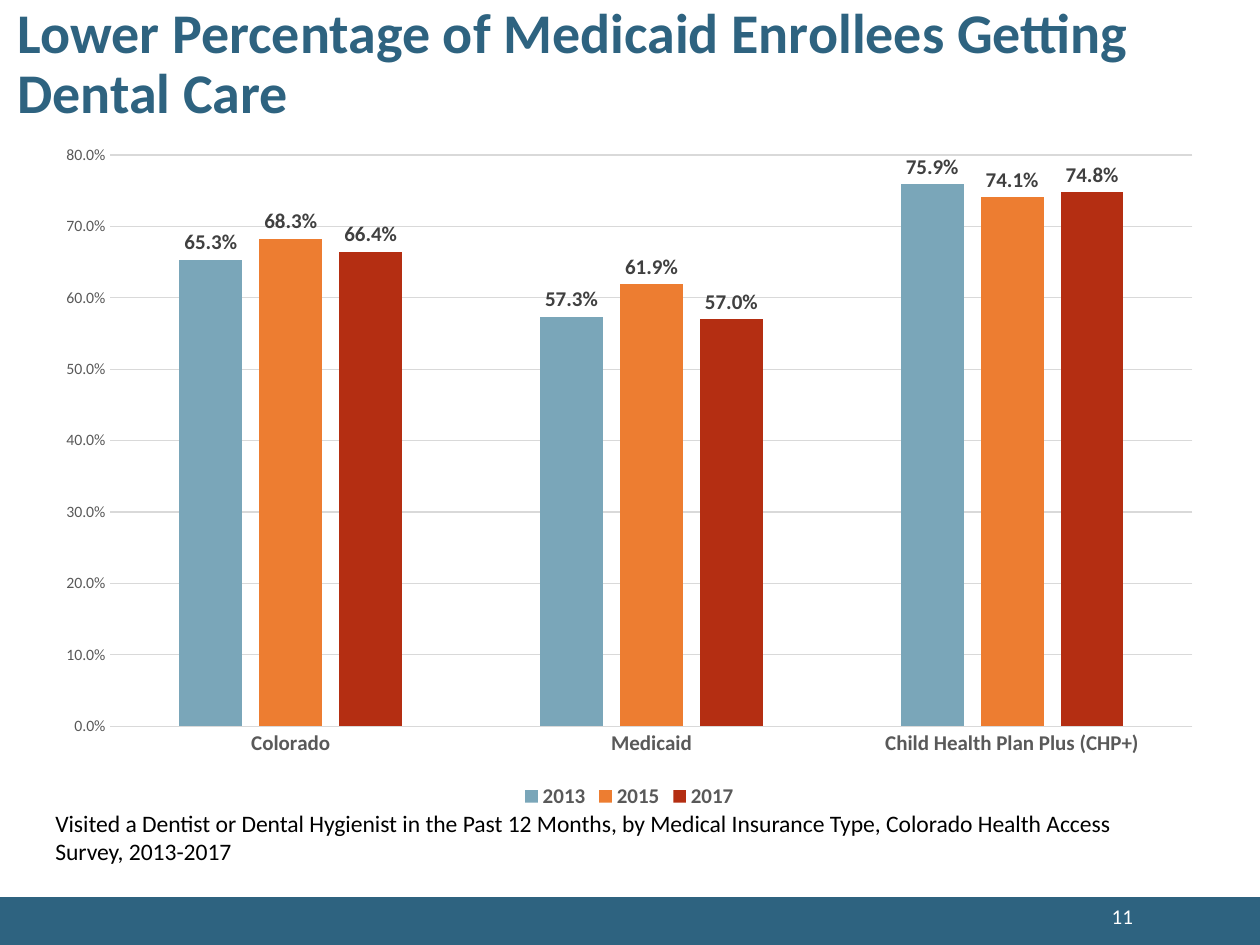
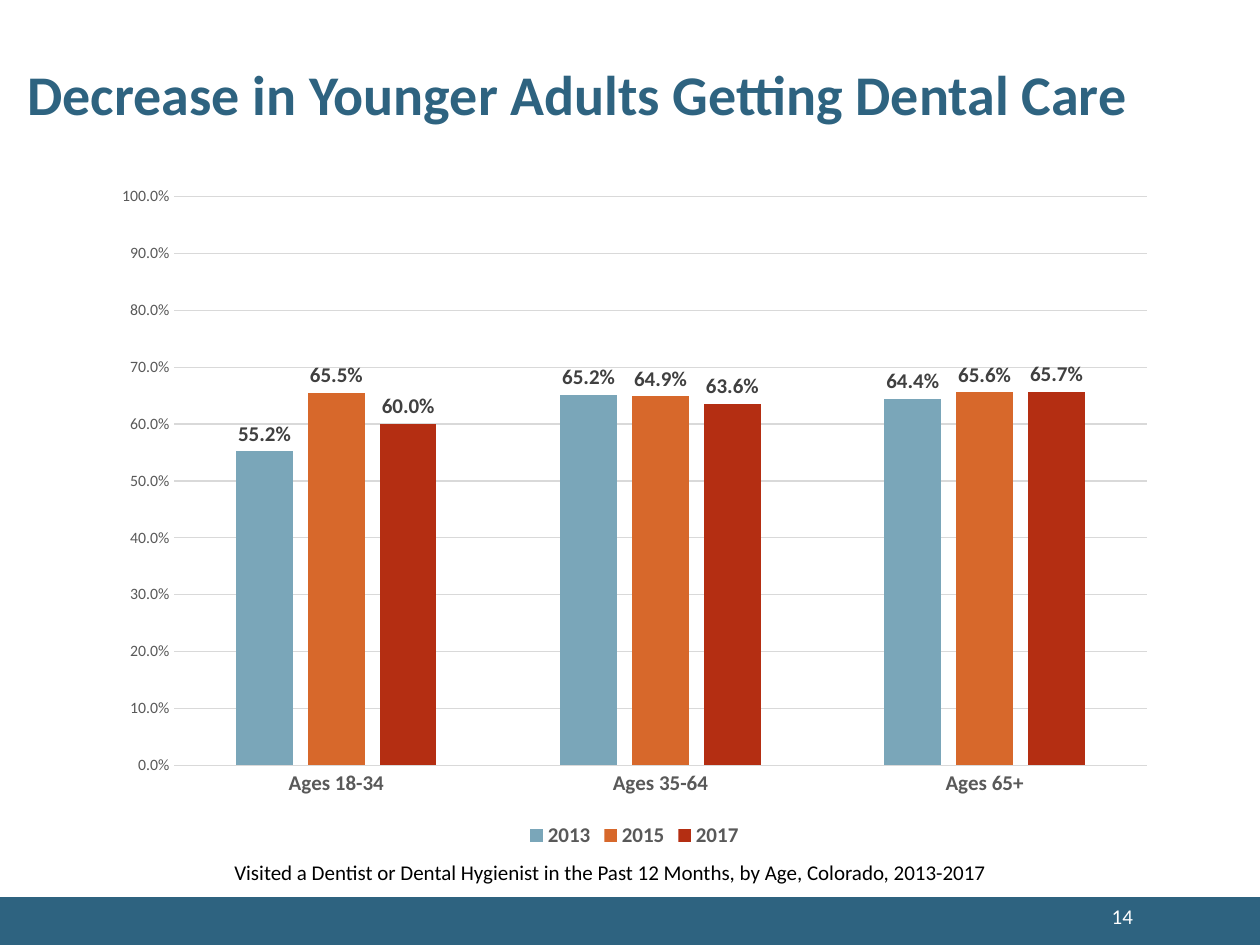
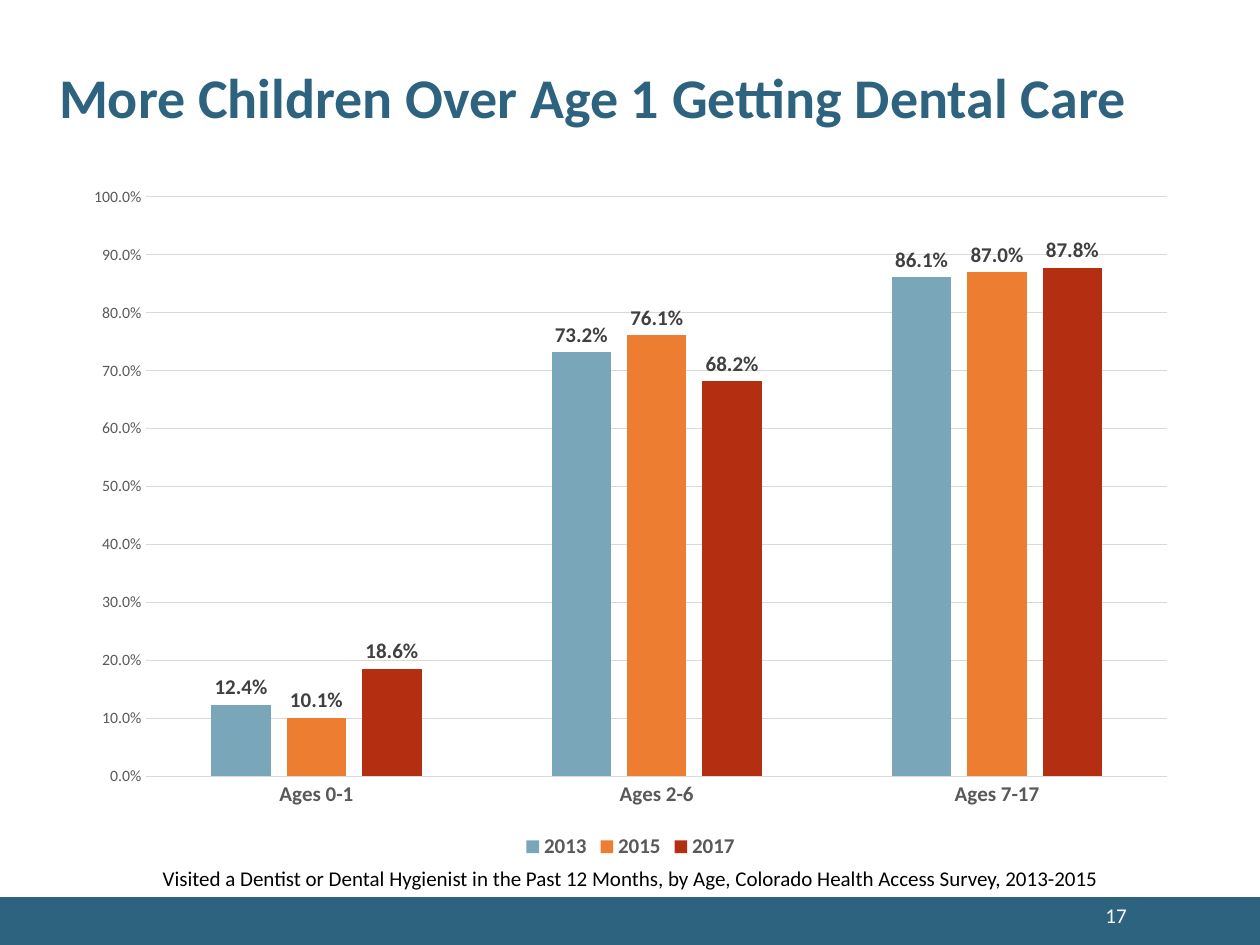
from dataclasses import dataclass

from pptx import Presentation
from pptx import util as u
from pptx.chart import data as chart_data
from pptx.dml import color
from pptx.enum import chart as ch
from pptx.enum import shapes, text

FONT = "Calibri"
TEAL, WHITE, BLACK = "2E6380", "FFFFFF", "000000"
AXIS_GREY, LABEL_GREY, GRID_GREY = "595959", "404040", "D9D9D9"
BLUE, ORANGE, RUST, RED = "7AA6B9", "ED7D31", "D7682B", "B42E12"
YEARS = ("2013", "2015", "2017")
COLUMNS, ROWS = 100, 75
PERCENT = "0.0%"

deck = Presentation()
deck.slide_width = u.Inches(10)
deck.slide_height = u.Inches(7.5)


@dataclass
class Box:
    column: float
    row: float
    columns: float
    rows: float

    def inner(self, column, row, columns, rows):
        return Box(self.column + column, self.row + row, columns, rows)

    def frame(self):
        across, down = deck.slide_width / COLUMNS, deck.slide_height / ROWS
        return (round(self.column * across), round(self.row * down),
                round(self.columns * across), round(self.rows * down))


PAGE = Box(0, 0, COLUMNS, ROWS)
BAND = PAGE.inner(0, 71.2, COLUMNS, 3.8)


def rgb(code):
    return color.RGBColor.from_string(code)


def style_font(font, size, code, bold=False):
    font.name = FONT
    font.size = u.Pt(size)
    font.bold = bold
    font.color.rgb = rgb(code)


def add_text(page, box, words, size, code, bold=False,
             align=text.PP_ALIGN.LEFT, anchor=text.MSO_ANCHOR.TOP, spacing=1.0):
    frame = page.shapes.add_textbox(*box.frame()).text_frame
    frame.word_wrap = True
    frame.vertical_anchor = anchor
    para = frame.paragraphs[0]
    para.text = words
    para.alignment = align
    para.line_spacing = spacing
    style_font(para.font, size, code, bold)


def add_title(page, box, words):
    add_text(page, box, words, 32, TEAL, bold=True,
             anchor=text.MSO_ANCHOR.MIDDLE, spacing=0.9)


def add_band(page, box):
    band = page.shapes.add_shape(shapes.MSO_SHAPE.RECTANGLE, *box.frame())
    band.shadow.inherit = False
    band.fill.solid()
    band.fill.fore_color.rgb = rgb(TEAL)
    band.line.fill.background()


def add_page_number(page, box, number):
    add_text(page, box, str(number), 12, WHITE,
             align=text.PP_ALIGN.RIGHT, anchor=text.MSO_ANCHOR.MIDDLE)


def style_axes(chart, top):
    groups, scale = chart.category_axis, chart.value_axis
    for axis, size, bold in ((groups, 12, True), (scale, 9, False)):
        axis.major_tick_mark = axis.minor_tick_mark = ch.XL_TICK_MARK.NONE
        style_font(axis.tick_labels.font, size, AXIS_GREY, bold)
    scale.minimum_scale, scale.maximum_scale, scale.major_unit = 0, top, 0.1
    scale.tick_labels.number_format = PERCENT
    scale.tick_labels.number_format_is_linked = False
    scale.format.line.fill.background()
    scale.has_major_gridlines = True
    for line in (groups.format.line, scale.major_gridlines.format.line):
        line.color.rgb = rgb(GRID_GREY)
        line.width = u.Pt(0.75)


def style_series(series, code):
    series.format.fill.solid()
    series.format.fill.fore_color.rgb = rgb(code)
    series.invert_if_negative = False
    labels = series.data_labels
    labels.show_value = True
    labels.number_format = PERCENT
    labels.number_format_is_linked = False
    labels.position = ch.XL_LABEL_POSITION.OUTSIDE_END
    style_font(labels.font, 12, LABEL_GREY, bold=True)


def add_visits_chart(page, box, visits, middle_colour, top):
    source = chart_data.CategoryChartData(number_format=PERCENT)
    source.categories = list(visits)
    for year, values in zip(YEARS, zip(*visits.values())):
        source.add_series(year, values)
    chart = page.shapes.add_chart(
        ch.XL_CHART_TYPE.COLUMN_CLUSTERED, *box.frame(), source).chart
    style_font(chart.font, 10, BLACK)
    chart.has_title = False
    chart.has_legend = True
    chart.legend.position = ch.XL_LEGEND_POSITION.BOTTOM
    chart.legend.include_in_layout = False
    style_font(chart.legend.font, 12, AXIS_GREY, bold=True)
    style_axes(chart, top)
    plot = chart.plots[0]
    plot.vary_by_categories = False
    plot.gap_width, plot.overlap = 219, -27
    for series, code in zip(plot.series, (BLUE, middle_colour, RED)):
        style_series(series, code)


def add_chart_page(number, title, title_box, caption, caption_box, visits, chart_box,
                   middle_colour=ORANGE, top=1, caption_size=12,
                   caption_align=text.PP_ALIGN.CENTER, number_box=(68.4, 0, 22.5, 3)):
    page = deck.slides.add_slide(deck.slide_layouts[6])
    add_band(page, BAND)
    add_title(page, PAGE.inner(*title_box), title)
    add_text(page, PAGE.inner(*caption_box), caption, caption_size, BLACK,
             align=caption_align)
    add_visits_chart(page, PAGE.inner(*chart_box), visits, middle_colour, top)
    add_page_number(page, BAND.inner(*number_box), number)


def main():
    add_chart_page(
        11, "Lower Percentage of Medicaid Enrollees Getting Dental Care",
        (0.4, 0.9, 99.6, 8.6),
        "Visited a Dentist or Dental Hygienist in the Past 12 Months, by Medical "
        "Insurance Type, Colorado Health Access Survey, 2013-2017",
        (3.4, 63.7, 90.9, 5.6),
        {"Colorado": (0.653, 0.683, 0.664),
         "Medicaid": (0.573, 0.619, 0.57),
         "Child Health Plan Plus (CHP+)": (0.759, 0.741, 0.748)},
        (3.4, 10.5, 93.1, 54.1),
        top=0.8, caption_size=13.5, caption_align=text.PP_ALIGN.LEFT)
    add_chart_page(
        14, "Decrease in Younger Adults Getting Dental Care",
        (1.2, 0.1, 98.4, 15.3),
        "Visited a Dentist or Dental Hygienist in the Past 12 Months, by Age, "
        "Colorado, 2013-2017",
        (4.1, 67.7, 88.7, 3),
        {"Ages 18-34": (0.552, 0.655, 0.6),
         "Ages 35-64": (0.652, 0.649, 0.636),
         "Ages 65+": (0.644, 0.656, 0.657)},
        (8, 13.8, 84.7, 53.9), middle_colour=RUST)
    add_chart_page(
        17, "More Children Over Age 1 Getting Dental Care",
        (3.7, 2.1, 94.1, 11.7),
        "Visited a Dentist or Dental Hygienist in the Past 12 Months, by Age, "
        "Colorado Health Access Survey, 2013-2015",
        (5.7, 68.2, 88.7, 3),
        {"Ages 0-1": (0.124, 0.101, 0.186),
         "Ages 2-6": (0.732, 0.761, 0.682),
         "Ages 7-17": (0.861, 0.87, 0.878)},
        (5.7, 13.8, 88.7, 54.8), number_box=(67.9, -0.1, 22.5, 3))
    deck.save("out.pptx")


if __name__ == "__main__":
    main()
